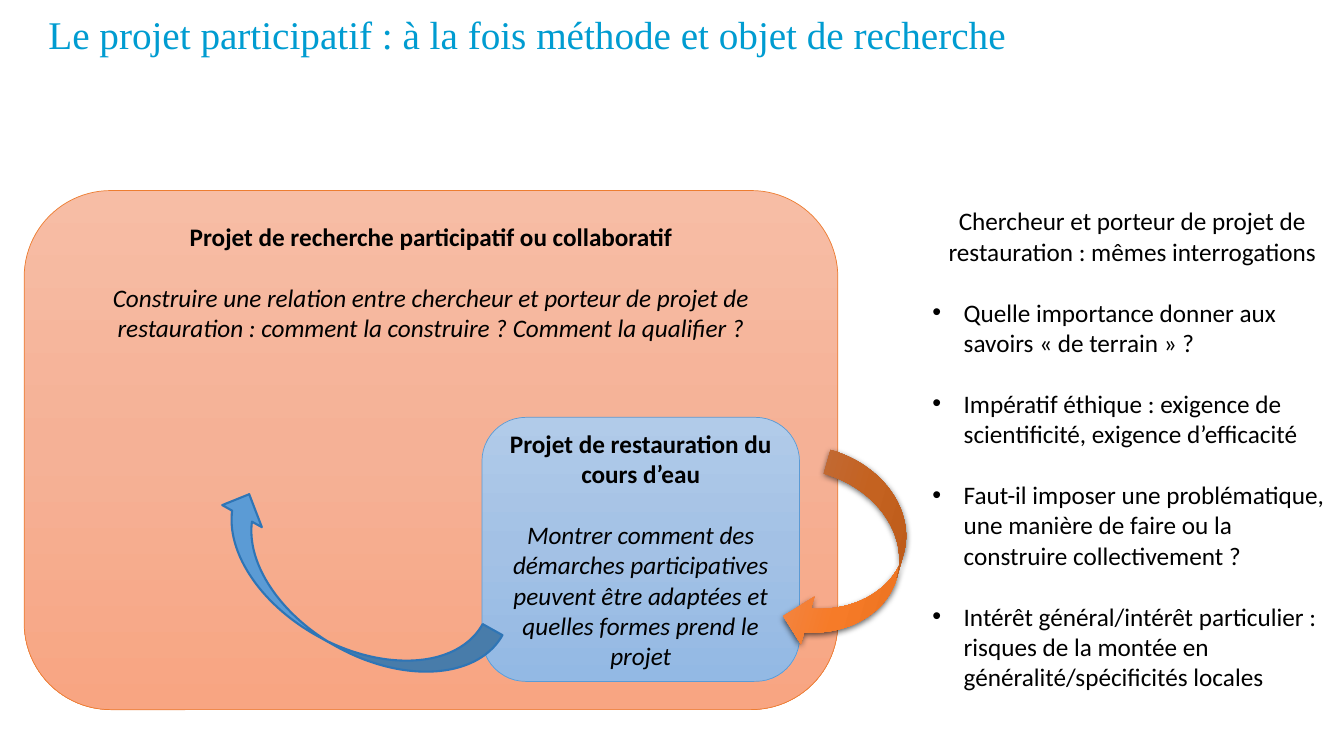
"""Build the slide on the participatory project as method and object of research."""
import copy

import lxml.etree
import pptx
import pptx.dml.color
import pptx.enum.shapes
import pptx.enum.text
import pptx.oxml.ns
import pptx.util
from pptx.util import Inches, Pt

TITLE = "Le projet participatif : à la fois méthode et objet de recherche"
RESEARCH = (
    "Projet de recherche participatif ou collaboratif",
    "Construire une relation entre chercheur et porteur de projet de restauration : "
    "comment la construire ? Comment la qualifier ?",
)
RESTORATION = (
    "Projet de restauration du cours d’eau",
    "Montrer comment des démarches participatives peuvent être adaptées "
    "et quelles formes prend le projet",
)
SHARED_INTRO = "Chercheur et porteur de projet de restauration : mêmes interrogations"
SHARED_QUESTIONS = [
    "Quelle importance donner aux savoirs « de terrain » ?",
    "Impératif éthique : exigence de scientificité, exigence d’efficacité",
    "Faut-il imposer une problématique, une manière de faire ou la construire collectivement ?",
    "Intérêt général/intérêt particulier : risques de la montée en "
    "généralité/spécificités locales",
]
COLORS = {"title": "009CD1", "text": "000000", "orange": "ED7D31", "blue": "5B9BD5",
          "dark blue": "2E75B6"}
GRADIENTS = {
    "orange box": ("F7BDA5", "F5B196", "F8A582"),
    "blue box": ("B1CBE9", "A3C1E5", "93B9E4"),
    "orange arrow": ("F18C57", "F67B28", "E56C19"),
}
PARAGRAPH_GAP = Pt(22)
BULLET_INDENT = Inches(0.31)
SHAPES = pptx.enum.shapes.MSO_SHAPE
ANCHOR = pptx.enum.text.MSO_ANCHOR
ALIGN = pptx.enum.text.PP_ALIGN


def rgb(hex_color):
    return pptx.dml.color.RGBColor.from_string(hex_color)


def format_runs(paragraph, size=18, font="Calibri", color="text", bold=False, italic=False):
    for run in paragraph.runs:
        run.font.size = Pt(size)
        run.font.name = font
        run.font.bold = bold
        run.font.italic = italic
        run.font.color.rgb = rgb(COLORS[color])


def add_shape(slide, kind, box, rotation=0):
    shape = slide.shapes.add_shape(kind, *map(Inches, box))
    shape.rotation = rotation
    shape.shadow.inherit = False
    return shape


def set_line(shape, color, width):
    shape.line.color.rgb = rgb(COLORS[color])
    shape.line.width = Pt(width)


def set_gradient(shape, name, angle):
    shape.fill.gradient()
    shape.fill.gradient_angle = angle
    stop_list = shape.element.spPr.find(".//" + pptx.oxml.ns.qn("a:gsLst"))
    stop_list.append(copy.deepcopy(stop_list[-1]))
    for stop, color, position in zip(shape.fill.gradient_stops, GRADIENTS[name], (0, 0.5, 1)):
        stop.color.rgb = rgb(color)
        stop.position = position


def add_shadow(shape):
    effects = shape.element.spPr.find(pptx.oxml.ns.qn("a:effectLst"))
    shadow = lxml.etree.SubElement(
        effects, pptx.oxml.ns.qn("a:outerShdw"), blurRad=str(Pt(4.5)), dist=str(Pt(1.5)),
        dir="5400000", algn="ctr", rotWithShape="0")
    color = lxml.etree.SubElement(shadow, pptx.oxml.ns.qn("a:srgbClr"), val="000000")
    lxml.etree.SubElement(color, pptx.oxml.ns.qn("a:alpha"), val="63000")


def add_project_box(slide, texts, box, gradient, line, anchor):
    shape = add_shape(slide, SHAPES.ROUNDED_RECTANGLE, box)
    set_gradient(shape, gradient, 270)
    set_line(shape, line, 0.5)
    frame = shape.text_frame
    frame.word_wrap = True
    frame.vertical_anchor = anchor
    frame.text = "\n".join(texts)
    heading, question = frame.paragraphs
    format_runs(heading, bold=True)
    format_runs(question, italic=True)
    question.space_before = PARAGRAPH_GAP
    heading.alignment = question.alignment = ALIGN.CENTER


def add_bullet(paragraph):
    properties = paragraph._p.get_or_add_pPr()
    properties.set("marL", str(BULLET_INDENT))
    properties.set("indent", str(-BULLET_INDENT))
    lxml.etree.SubElement(properties, pptx.oxml.ns.qn("a:buFont"), typeface="Arial")
    lxml.etree.SubElement(properties, pptx.oxml.ns.qn("a:buChar"), char="•")


def add_title(slide):
    title = slide.shapes.title
    title.left, title.top, title.width, title.height = map(Inches, (0.38, 0.04, 11.5, 0.65))
    title.text_frame.text = TITLE
    title.text_frame.vertical_anchor = ANCHOR.MIDDLE
    paragraph = title.text_frame.paragraphs[0]
    paragraph.alignment = ALIGN.LEFT
    paragraph.line_spacing = 0.9
    format_runs(paragraph, 28, "Times New Roman", "title")


def add_shared_questions(slide):
    frame = slide.shapes.add_textbox(*map(Inches, (9.15, 1.99, 4.16, 4.95))).text_frame
    frame.word_wrap = True
    frame.text = "\n".join([SHARED_INTRO, *SHARED_QUESTIONS])
    intro, *questions = frame.paragraphs
    intro.alignment = ALIGN.CENTER
    format_runs(intro)
    for question in questions:
        question.space_before = PARAGRAPH_GAP
        add_bullet(question)
        format_runs(question)


def main():
    presentation = pptx.Presentation()
    presentation.slide_width, presentation.slide_height = Inches(13.33), Inches(7.5)
    slide = presentation.slides.add_slide(presentation.slide_layouts[5])
    add_title(slide)
    add_project_box(slide, RESEARCH, (0.24, 1.89, 8.07, 5.15), "orange box", "orange",
                    ANCHOR.TOP)
    add_project_box(slide, RESTORATION, (4.78, 4.14, 3.15, 2.62), "blue box", "blue",
                    ANCHOR.MIDDLE)

    orange_arrow = add_shape(slide, SHAPES.CURVED_LEFT_ARROW, (7.95, 4.56, 0.98, 1.96), 15.9)
    set_gradient(orange_arrow, "orange arrow", 0)
    orange_arrow.line.fill.background()
    add_shadow(orange_arrow)

    blue_arrow = add_shape(slide, SHAPES.CURVED_LEFT_ARROW, (2.96, 4.39, 0.9, 3.1), 119.1)
    blue_arrow.fill.solid()
    blue_arrow.fill.fore_color.rgb = rgb(COLORS["blue"])
    set_line(blue_arrow, "dark blue", 1.5)

    add_shared_questions(slide)
    presentation.save("out.pptx")


if __name__ == "__main__":
    main()
